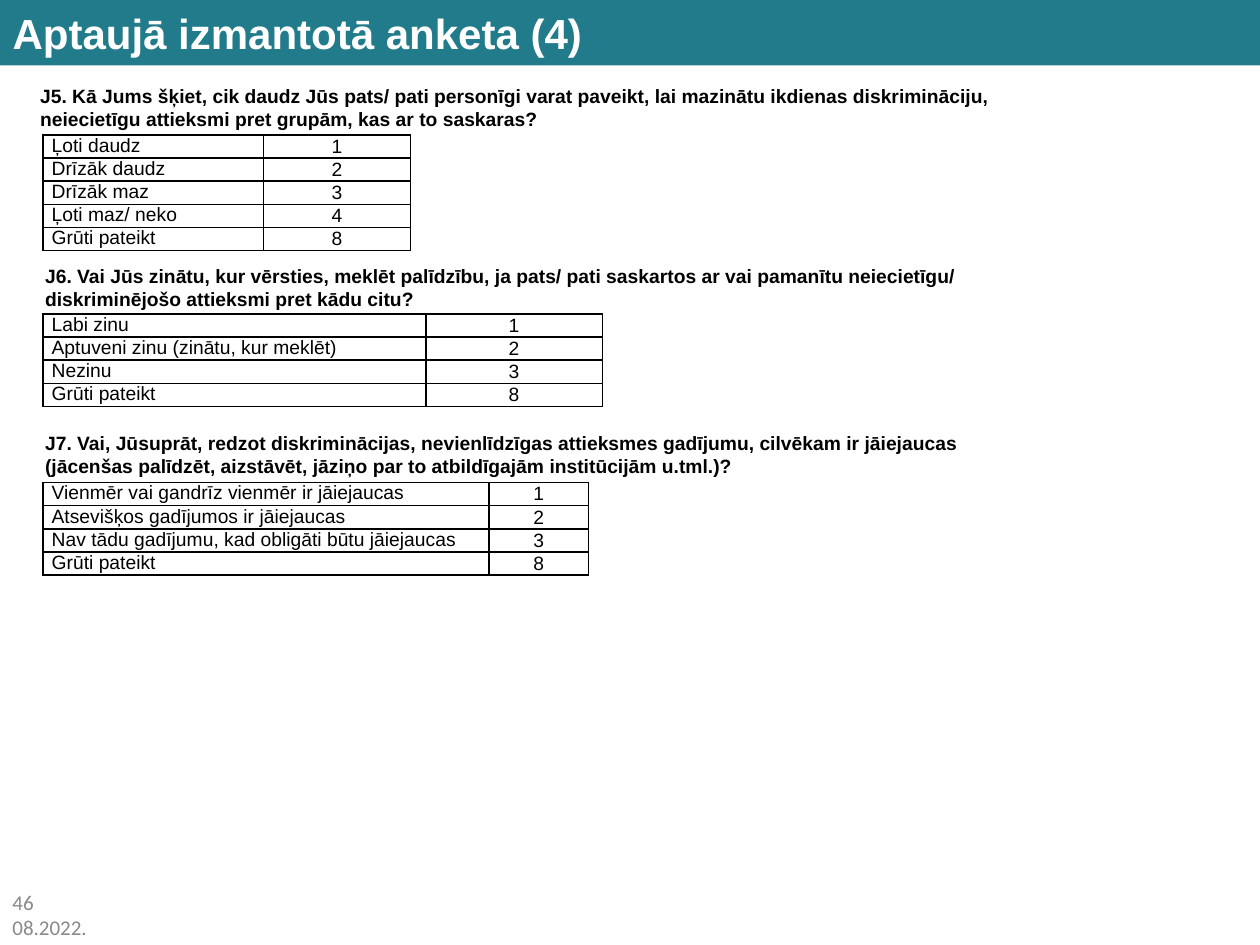
import dataclasses

import lxml.etree
import pptx
import pptx.dml.color
import pptx.enum.text
import pptx.oxml.ns
import pptx.util

Inches = pptx.util.Inches
Pt = pptx.util.Pt
Align = pptx.enum.text.PP_ALIGN
Anchor = pptx.enum.text.MSO_ANCHOR


@dataclasses.dataclass(frozen=True)
class Theme:
    heading_font: str = "Arial"
    footer_font: str = "Calibri"
    title_size: int = 24
    body_size: int = 11
    footer_size: int = 12
    banner: str = "227B8B"
    white: str = "FFFFFF"
    black: str = "000000"
    gray: str = "898989"
    border_width: int = 1


class SurveySlide:
    """Holds the theme and the slide that is being filled."""

    def __init__(self, slide, theme):
        self.slide = slide
        self.theme = theme

    def add_run(self, paragraph, text, size, color, bold=False, font=None):
        run = paragraph.add_run()
        run.text = text
        run.font.name = font or self.theme.heading_font
        run.font.size = Pt(size)
        run.font.bold = bold
        run.font.color.rgb = pptx.dml.color.RGBColor.from_string(color)

    def add_title(self, text):
        title = self.slide.shapes.title
        title.left, title.top = Inches(0), Inches(0)
        title.width, title.height = Inches(10), Inches(0.52)
        title.fill.solid()
        title.fill.fore_color.rgb = pptx.dml.color.RGBColor.from_string(self.theme.banner)
        frame = title.text_frame
        frame.auto_size = pptx.enum.text.MSO_AUTO_SIZE.NONE
        frame.vertical_anchor = Anchor.MIDDLE
        paragraph = frame.paragraphs[0]
        paragraph.alignment = Align.LEFT
        self.add_run(paragraph, text, self.theme.title_size, self.theme.white, bold=True)

    def add_text_box(self, left, top, width, height):
        box = self.slide.shapes.add_textbox(
            Inches(left), Inches(top), Inches(width), Inches(height))
        box.text_frame.word_wrap = True
        return box.text_frame

    def add_question(self, left, top, text):
        frame = self.add_text_box(left, top, 8.03, 0.47)
        self.add_run(frame.paragraphs[0], text, self.theme.body_size,
                     self.theme.black, bold=True)

    def add_footer(self, lines):
        frame = self.add_text_box(0, 7.01, 1.28, 0.49)
        for index, line in enumerate(lines):
            paragraph = frame.add_paragraph() if index else frame.paragraphs[0]
            self.add_run(paragraph, line, self.theme.footer_size, self.theme.gray,
                         font=self.theme.footer_font)

    def add_borders(self, cell):
        properties = cell._tc.get_or_add_tcPr()
        qn = pptx.oxml.ns.qn
        for side in ("a:lnL", "a:lnR", "a:lnT", "a:lnB"):
            line = lxml.etree.SubElement(
                properties, qn(side), w=str(Pt(self.theme.border_width)))
            fill = lxml.etree.SubElement(line, qn("a:solidFill"))
            lxml.etree.SubElement(fill, qn("a:srgbClr"), val=self.theme.black)

    def fill_cell(self, cell, text, alignment, anchor):
        cell.margin_left = cell.margin_right = Inches(0.07)
        cell.margin_top = cell.margin_bottom = 0
        cell.vertical_anchor = anchor
        self.add_borders(cell)
        cell.fill.background()
        paragraph = cell.text_frame.paragraphs[0]
        paragraph.alignment = alignment
        self.add_run(paragraph, text, self.theme.body_size, self.theme.black)

    def add_answers(self, top, height, widths, answers, alignment):
        frame = self.slide.shapes.add_table(
            len(answers), len(widths), Inches(0.34), Inches(top),
            Inches(sum(widths)), Inches(height))
        table = frame.table
        table.first_row = table.horz_banding = False
        for column, width in zip(table.columns, widths):
            column.width = Inches(width)
        for row, (answer, code) in enumerate(answers):
            self.fill_cell(table.cell(row, 0), answer, alignment, Anchor.TOP)
            self.fill_cell(table.cell(row, 1), code, Align.CENTER, Anchor.MIDDLE)


# Question left, top and text; table top, height, column widths, alignment, answers
QUESTIONS = [
    (0.22, 0.62,
     "J5. Kā Jums šķiet, cik daudz Jūs pats/ pati personīgi varat paveikt, lai mazinātu "
     "ikdienas diskrimināciju, neiecietīgu attieksmi pret grupām, kas ar to saskaras?",
     1.07, 0.92, (1.75, 1.17), Align.JUSTIFY,
     [("Ļoti daudz", "1"), ("Drīzāk daudz", "2"), ("Drīzāk maz", "3"),
      ("Ļoti maz/ neko", "4"), ("Grūti pateikt", "8")]),
    (0.26, 2.05,
     "J6. Vai Jūs zinātu, kur vērsties, meklēt palīdzību, ja pats/ pati saskartos ar vai "
     "pamanītu neiecietīgu/ diskriminējošo attieksmi pret kādu citu?",
     2.49, 0.73, (3.04, 1.4), Align.JUSTIFY,
     [("Labi zinu", "1"), ("Aptuveni zinu (zinātu, kur meklēt)", "2"),
      ("Nezinu", "3"), ("Grūti pateikt", "8")]),
    (0.26, 3.37,
     "J7. Vai, Jūsuprāt, redzot diskriminācijas, nevienlīdzīgas attieksmes gadījumu, "
     "cilvēkam ir jāiejaucas (jācenšas palīdzēt, aizstāvēt, jāziņo par to atbildīgajām "
     "institūcijām u.tml.)?",
     3.83, 0.73, (3.54, 0.79), Align.LEFT,
     [("Vienmēr vai gandrīz vienmēr ir jāiejaucas", "1"),
      ("Atsevišķos gadījumos ir jāiejaucas", "2"),
      ("Nav tādu gadījumu, kad obligāti būtu jāiejaucas", "3"),
      ("Grūti pateikt", "8")]),
]


def main():
    presentation = pptx.Presentation()
    presentation.slide_width = Inches(10)
    presentation.slide_height = Inches(7.5)
    title_only = presentation.slide_layouts[5]
    survey = SurveySlide(presentation.slides.add_slide(title_only), Theme())

    # Page number and date, then the title banner
    survey.add_footer(["46", "08.2022."])
    survey.add_title("Aptaujā izmantotā anketa (4)")

    # Each question with its answer codes
    for left, top, text, table_top, height, widths, alignment, answers in QUESTIONS:
        survey.add_question(left, top, text)
        survey.add_answers(table_top, height, widths, answers, alignment)

    presentation.save("out.pptx")


if __name__ == "__main__":
    main()
